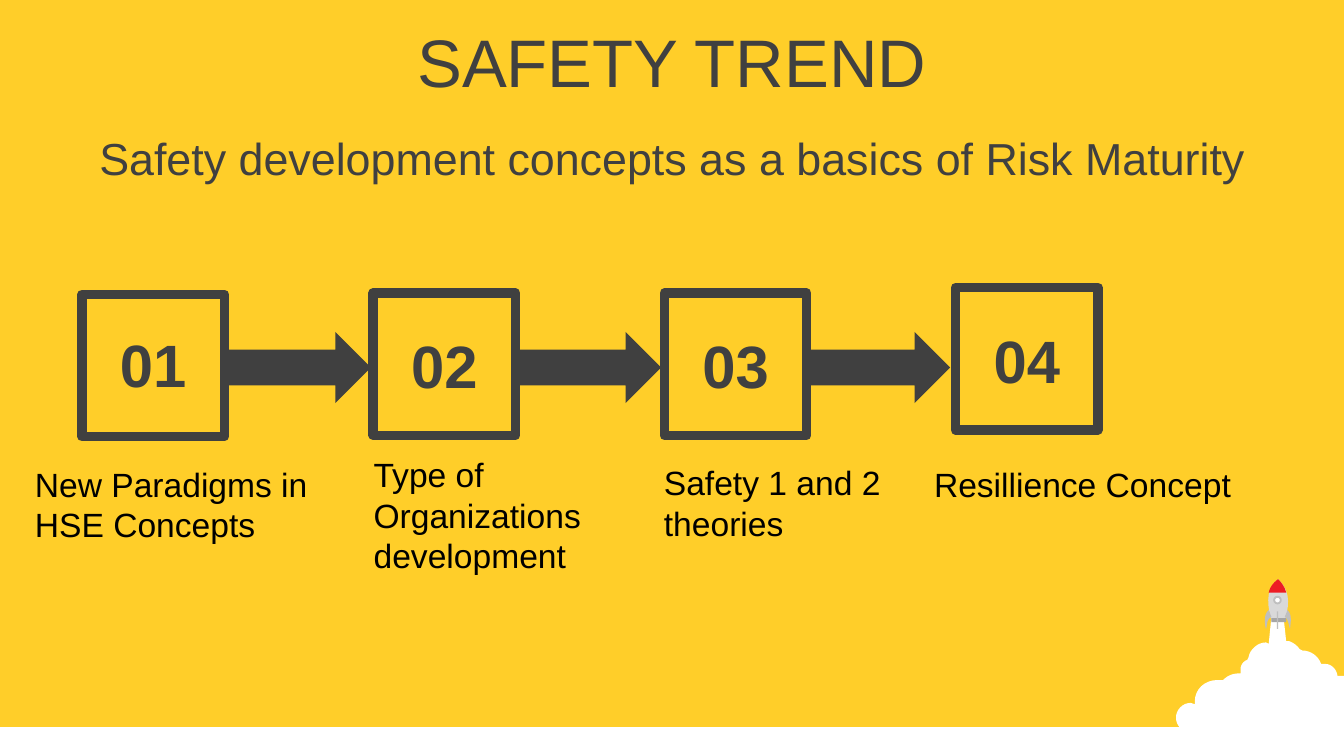
from dataclasses import dataclass

from lxml.etree import SubElement
from pptx import Presentation
from pptx.dml.color import RGBColor
from pptx.enum.shapes import MSO_SHAPE as Shape
from pptx.enum.text import MSO_ANCHOR as Anchor, MSO_AUTO_SIZE as AutoSize, PP_ALIGN as Align
from pptx.oxml.ns import qn
from pptx.util import Inches, Pt


@dataclass(frozen=True)
class Theme:
    font: str = "Arial"
    background: str = "FFCE29"
    dark: str = "404040"
    black: str = "000000"
    white: str = "FFFFFF"
    red: str = "ED1C24"
    hull: str = "D9D9D9"
    band: str = "A6A6A6"
    fin: str = "BFBFBF"
    title_size: int = 36
    subtitle_size: int = 24
    number_size: int = 32
    label_size: int = 18


THEME = Theme()

SLIDE_WIDTH = Inches(10)
SLIDE_HEIGHT = SLIDE_WIDTH * 9 // 16

SQUARE = 1.06
FIRST_LEFT, LAST_LEFT = 0.61, 7.11
PITCH = (LAST_LEFT - FIRST_LEFT) / 3
# Tops of each square and of its number
STEP_TOPS = ((2.19, 2.39), (2.18, 2.4), (2.18, 2.4), (2.14, 2.36))
ARROW_LEFTS = (1.69, 3.85, 6)
LABEL_INDENT = 0.6

# Label boxes: left, top, width, height, lines
LABELS = (
    (-0.34, 3.4, 2.95, 0.71, ["New Paradigms in HSE Concepts"]),
    (2.18, 3.33, 3.29, 1.01, ["Type of", "Organizations", "development"]),
    (4.34, 3.39, 2.34, 0.71, ["Safety 1 and 2", "theories"]),
    (6.35, 3.4, 2.94, 0.4, ["Resillience Concept"]),
)

# Outlines: a pair is a straight step, six numbers are a cubic curve
SMOKE = (
    (9.46, 4.59), (9.55, 4.59), (9.57, 4.77), (9.59, 4.77),
    (9.62, 4.78, 9.65, 4.8, 9.67, 4.83), (9.69, 4.84),
    (9.75, 4.84, 9.81, 4.88, 9.83, 4.94), (9.86, 4.94),
    (9.9, 4.94, 9.94, 4.97, 9.95, 5.02), (9.95, 5.03), (10, 5.03),
    (10, 5.61), (9.34, 5.61),
    (9.23, 5.61, 9.17, 5.56, 9.13, 5.51),
    (9.11, 5.53, 9.07, 5.54, 9.04, 5.53),
    (9, 5.52, 8.94, 5.5, 8.93, 5.45), (8.92, 5.44),
    (8.91, 5.45, 8.89, 5.45, 8.86, 5.45),
    (8.8, 5.45, 8.75, 5.4, 8.75, 5.34),
    (8.75, 5.28, 8.8, 5.23, 8.86, 5.23), (8.89, 5.24), (8.89, 5.22),
    (8.89, 5.13, 8.96, 5.06, 9.06, 5.06), (9.1, 5.06),
    (9.14, 5.02, 9.18, 5.01, 9.23, 5.01), (9.23, 4.98),
    (9.23, 4.95, 9.25, 4.92, 9.28, 4.91), (9.29, 4.89),
    (9.3, 4.83, 9.36, 4.78, 9.42, 4.78), (9.44, 4.79),
)
HULL = ((9.46, 4.62), (9.44, 4.53, 9.4, 4.4, 9.51, 4.31),
        (9.62, 4.41, 9.58, 4.54, 9.56, 4.62))
NOSE = ((9.51, 4.31), (9.54, 4.34, 9.56, 4.37, 9.57, 4.41), (9.44, 4.41),
        (9.45, 4.37, 9.47, 4.34, 9.51, 4.31))
LEFT_FIN = ((9.44, 4.54), (9.46, 4.59), (9.42, 4.61, 9.43, 4.66, 9.42, 4.68),
            (9.41, 4.65, 9.4, 4.57, 9.44, 4.54))
RIGHT_FIN = ((9.58, 4.54), (9.56, 4.59), (9.59, 4.61, 9.59, 4.66, 9.6, 4.68),
             (9.6, 4.65, 9.62, 4.57, 9.58, 4.54))


def paint(shape, fill=None, line=None, weight=1):
    shape.shadow.inherit = False
    if fill:
        shape.fill.solid()
        shape.fill.fore_color.rgb = RGBColor.from_string(fill)
    else:
        shape.fill.background()
    if line:
        shape.line.color.rgb = RGBColor.from_string(line)
        shape.line.width = Pt(weight)
        SubElement(shape.element.spPr.find(qn("a:ln")), qn("a:round"))
    else:
        shape.line.fill.background()


def add_preset(page, kind, left, top, width, height, **colours):
    shape = page.shapes.add_shape(kind, *map(Inches, (left, top, width, height)))
    paint(shape, **colours)


def flatten(outline, steps=8):
    """Turn straight steps and cubic curves into a list of points."""
    points = [outline[0]]
    for part in outline[1:]:
        if len(part) == 2:
            points.append(part)
            continue
        controls = (points[-1], part[:2], part[2:4], part[4:])
        for step in range(1, steps + 1):
            t = step / steps
            weights = ((1 - t) ** 3, 3 * t * (1 - t) ** 2, 3 * t * t * (1 - t), t ** 3)
            points.append(tuple(sum(w * c[axis] for w, c in zip(weights, controls))
                                for axis in (0, 1)))
    return points


def add_outline(page, outline, fill):
    start, *others = [(Inches(x), Inches(y)) for x, y in flatten(outline)]
    builder = page.shapes.build_freeform(*start)
    builder.add_line_segments(others, close=True)
    paint(builder.convert_to_shape(), fill=fill)


def add_text(page, lines, left, top, width, height, *, size, color, bold=False,
             align=Align.LEFT, anchor=Anchor.TOP, indent=0.1, grow=False):
    box = page.shapes.add_textbox(*map(Inches, (left, top, width, height)))
    frame = box.text_frame
    frame.word_wrap = True
    frame.auto_size = AutoSize.SHAPE_TO_FIT_TEXT if grow else AutoSize.NONE
    frame.vertical_anchor = anchor
    frame.margin_left = Inches(indent)
    for index, line in enumerate(lines):
        para = frame.paragraphs[0] if index == 0 else frame.add_paragraph()
        para.alignment = align
        span = para.add_run()
        span.text = line
        span.font.name = THEME.font
        span.font.size = Pt(size)
        span.font.bold = bold
        span.font.color.rgb = RGBColor.from_string(color)


def add_rocket(page):
    add_outline(page, SMOKE, THEME.white)
    add_outline(page, HULL, THEME.hull)
    add_preset(page, Shape.RECTANGLE, 9.46, 4.6, 0.11, 0.03, fill=THEME.band)
    add_outline(page, NOSE, THEME.red)
    add_preset(page, Shape.OVAL, 9.48, 4.44, 0.05, 0.05, fill=THEME.white, line=THEME.fin)
    add_preset(page, Shape.RECTANGLE, 9.5, 4.55, 0.01, 0.13, fill=THEME.fin)
    for fin in (LEFT_FIN, RIGHT_FIN):
        add_outline(page, fin, THEME.fin)


def add_step(page, number, square_top, number_top):
    """Draw a framed square with its two-digit number."""
    left = FIRST_LEFT + (number - 1) * PITCH
    add_preset(page, Shape.RECTANGLE, left, square_top, SQUARE, SQUARE,
               line=THEME.dark, weight=5)
    add_text(page, [f"{number:02}"], left + 0.12, number_top, 0.82, 0.64, bold=True,
             size=THEME.number_size, color=THEME.dark, align=Align.CENTER, grow=True)


def main():
    deck = Presentation()
    deck.slide_width, deck.slide_height = SLIDE_WIDTH, SLIDE_HEIGHT
    page = deck.slides.add_slide(deck.slide_layouts[6])
    page.background.fill.solid()
    page.background.fill.fore_color.rgb = RGBColor.from_string(THEME.background)

    add_preset(page, Shape.RECTANGLE, 0, 5.41, 10, 0.24, fill=THEME.white)
    add_rocket(page)

    heading = dict(color=THEME.dark, align=Align.CENTER, anchor=Anchor.MIDDLE)
    add_text(page, ["SAFETY TREND"], 0, 0.14, 10, 0.63, size=THEME.title_size, **heading)
    add_text(page, ["Safety development concepts as a basics of Risk Maturity"],
             0, 1.02, 10, 0.31, size=THEME.subtitle_size, **heading)

    for number, tops in enumerate(STEP_TOPS, start=1):
        add_step(page, number, *tops)
    for left in ARROW_LEFTS:
        add_preset(page, Shape.RIGHT_ARROW, left, 2.47, 1.07, 0.53, fill=THEME.dark)
    for *place, lines in LABELS:
        add_text(page, lines, *place, size=THEME.label_size, color=THEME.black,
                 indent=LABEL_INDENT, grow=True)

    deck.save("out.pptx")


if __name__ == "__main__":
    main()
